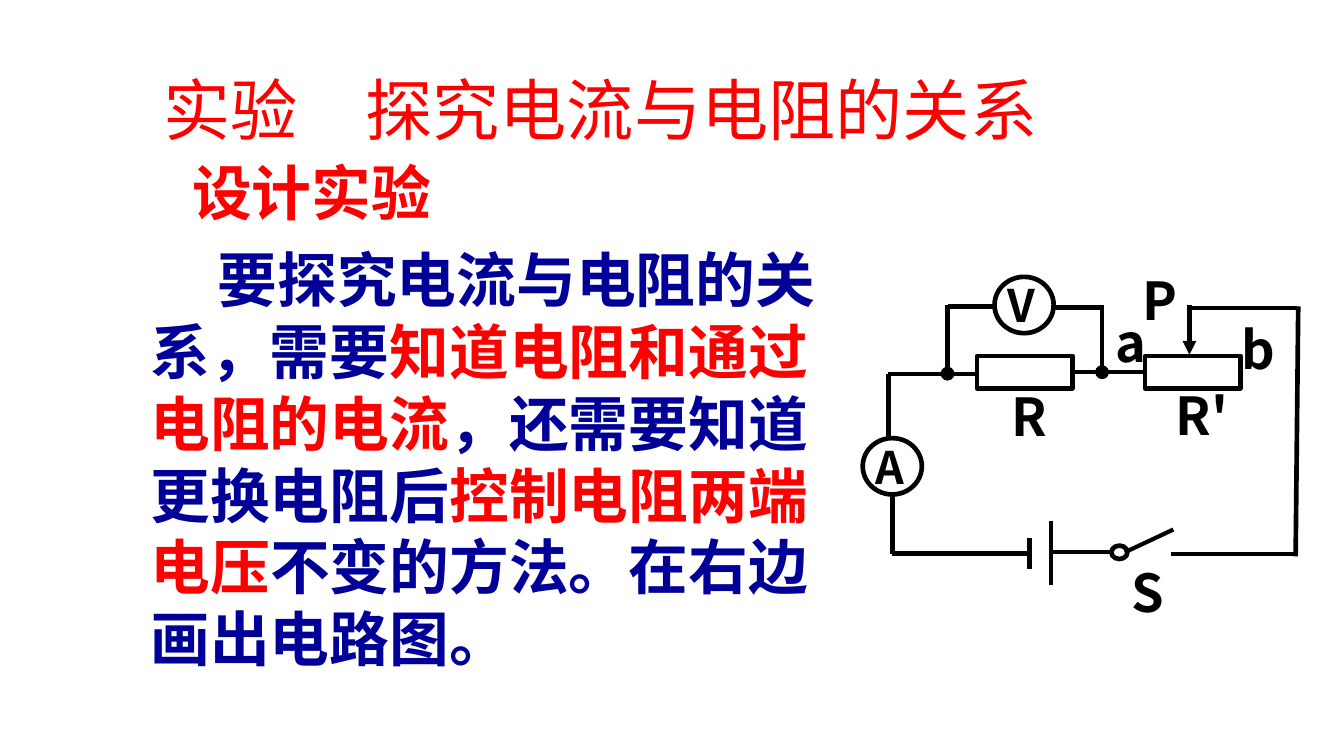
from typing import NamedTuple

from lxml.etree import SubElement
from pptx import Presentation
from pptx.dml.color import RGBColor
from pptx.enum.shapes import MSO_CONNECTOR as Link, MSO_SHAPE as Preset
from pptx.oxml.ns import qn
from pptx.util import Pt

FONT = "Noto Sans CJK SC"
BLACK, RED, NAVY = "000000", "FF0000", "000099"


class Wire(NamedTuple):
    x1: float
    y1: float
    x2: float
    y2: float
    weight: float = 2.25
    head: str = ""


class Outline(NamedTuple):
    preset: Preset
    left: float
    top: float
    width: float
    height: float


class Label(NamedTuple):
    text: str
    left: float
    top: float
    width: float = 38.9
    size: float = 28


def colour(value: str) -> RGBColor:
    return RGBColor.from_string(value)


def add_text(page, spans, left, top, width, height, *, size, bold=True,
             inset=(7.2, 3.6), indent=0):
    """Add one paragraph made of (text, colour) spans."""
    box = page.shapes.add_textbox(Pt(left), Pt(top), Pt(width), Pt(height))
    frame = box.text_frame
    frame.word_wrap = True
    frame.margin_left = frame.margin_right = Pt(inset[0])
    frame.margin_top = frame.margin_bottom = Pt(inset[1])
    para = frame.paragraphs[0]
    para.line_spacing = Pt(round(size * 1.2, 1))
    if indent:
        para._p.get_or_add_pPr().set("indent", str(Pt(indent)))
    for text, ink in spans:
        span = para.add_run()
        span.text = text
        font = span.font
        font.name, font.size, font.bold = FONT, Pt(size), bold
        font.color.rgb = colour(ink)
        SubElement(font._element, qn("a:ea")).set("typeface", FONT)


def draw_wire(page, wire: Wire) -> None:
    line = page.shapes.add_connector(
        Link.STRAIGHT, Pt(wire.x1), Pt(wire.y1), Pt(wire.x2), Pt(wire.y2))
    line.line.color.rgb = colour(BLACK)
    line.line.width = Pt(wire.weight)
    if wire.head:
        SubElement(line.line._get_or_add_ln(), qn("a:headEnd")).set("type", wire.head)
    SubElement(line._element.spPr, qn("a:effectLst"))


def draw_outline(page, item: Outline) -> None:
    shape = page.shapes.add_shape(
        item.preset, Pt(item.left), Pt(item.top), Pt(item.width), Pt(item.height))
    shape.shadow.inherit = False
    shape.fill.background()
    shape.line.color.rgb = colour(BLACK)
    shape.line.width = Pt(2.5)


def draw_label(page, label: Label) -> None:
    add_text(page, [(label.text, BLACK)], label.left, label.top, label.width,
             label.size * 1.2 + 7.2, size=label.size)


WIRES = [
    # Outer loop
    Wire(694.8, 164.9, 638.6, 164.9),
    Wire(694.1, 298.1, 695.5, 164.2, 2.5),
    Wire(694.1, 296.6, 627.1, 296.6),
    Wire(478.1, 296.6, 551.5, 296.6, 2.5),
    Wire(478.1, 296.6, 478.1, 264.2, 2.5),
    Wire(475.9, 235.4, 475.9, 200.2, 2.5),
    Wire(524.2, 200.2, 475.9, 200.2),
    Wire(613.4, 199.4, 574.6, 199.4),
    # Battery and switch
    Wire(551.5, 288, 551.5, 304.6),
    Wire(563, 279.4, 563, 313.2),
    Wire(595.4, 295.9, 563.8, 295.9),
    Wire(628.6, 283.7, 602.6, 295.9),
    # Voltmeter branch with junction dots
    Wire(507.6, 200.2, 507.6, 163.4, 2.5, "oval"),
    Wire(532.8, 164.2, 507.6, 164.2, 2.5),
    Wire(590.4, 164.9, 563, 164.9, 2.5),
    Wire(590.4, 199.4, 590.4, 163.4, 2.5, "oval"),
    # Rheostat slider
    Wire(637.2, 190.1, 637.2, 163.4, 2.5, "triangle"),
]

OUTLINES = [
    Outline(Preset.OVAL, 595.4, 292.3, 8.6, 7.2),
    Outline(Preset.OVAL, 532.8, 148.3, 31.7, 30.2),
    Outline(Preset.OVAL, 462.2, 234.7, 31.7, 30.2),
    Outline(Preset.RECTANGLE, 523.4, 190.8, 51.1, 17.3),
    Outline(Preset.RECTANGLE, 613.4, 190.8, 51.1, 17.3),
]

LABELS = [
    Label("R", 535, 202.3),
    Label("V", 532.8, 145.4, 31.7, 24),
    Label("A", 462.2, 231.8, 31.7, 24),
    Label("R'", 622.8, 201.6, 46.8),
    Label("P", 604.8, 140.4),
    Label("S", 599, 296.6),
    Label("a", 590.4, 162.7),
    Label("b", 658.1, 166.3),
]

BODY = [
    ("要探究电流与电阻的关系，需要", NAVY),
    ("知道电阻和通过电阻的电流", RED),
    ("，还需要知道更换电阻后", NAVY),
    ("控制电阻两端电压", RED),
    ("不变的方法。在右边画出电路图。", NAVY),
]


def main() -> None:
    deck = Presentation()
    deck.slide_width, deck.slide_height = Pt(720), Pt(405)
    page = deck.slides.add_slide(deck.slide_layouts[6])

    # Headings and task
    add_text(page, [("实验　探究电流与电阻的关系", RED)], 80.6, 33.1, 532.8, 51.1,
             size=36, bold=False)
    add_text(page, [("设计实验", RED)], 61.9, 80.6, 408.2, 43.9,
             size=32, inset=(5, 2.9), indent=36)
    add_text(page, BODY, 75.6, 127.4, 386.6, 238.3,
             size=32, inset=(5, 2.9), indent=36)

    # Circuit diagram
    for wire in WIRES:
        draw_wire(page, wire)
    for item in OUTLINES:
        draw_outline(page, item)
    for label in LABELS:
        draw_label(page, label)

    deck.save("out.pptx")


if __name__ == "__main__":
    main()
